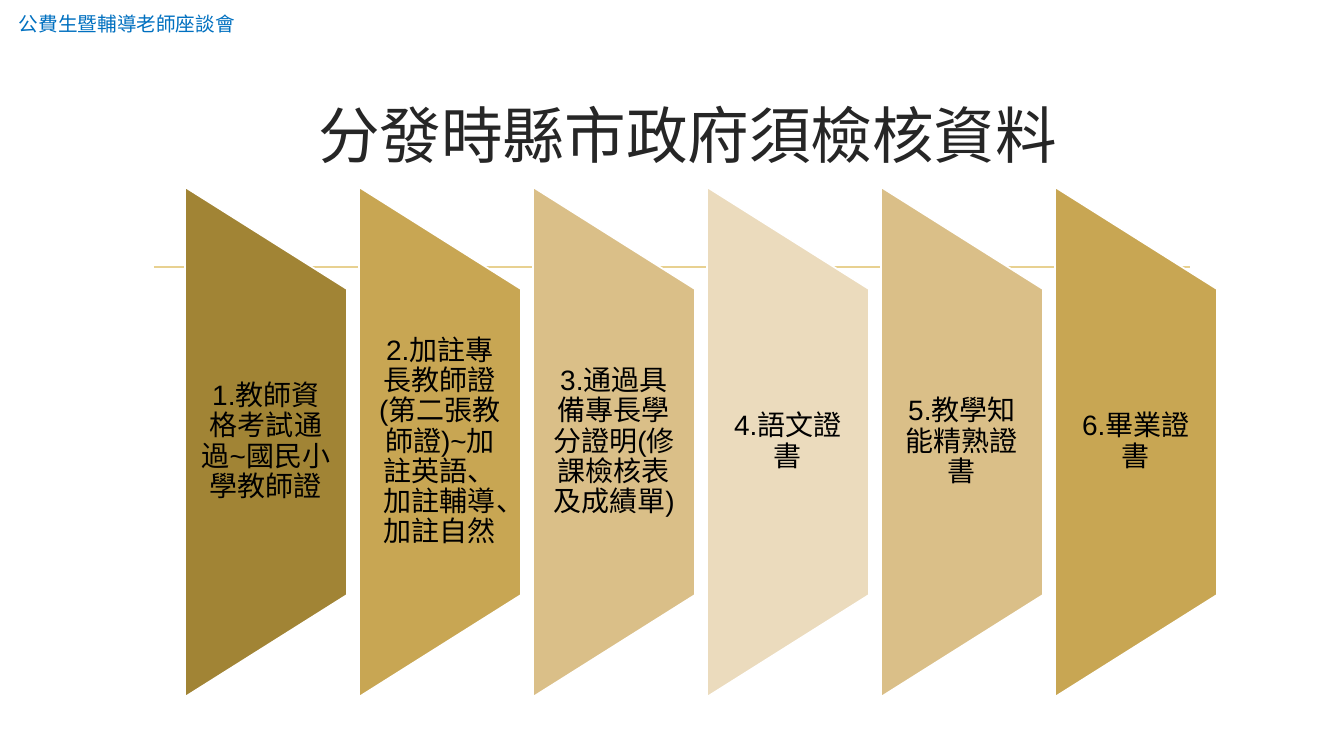
from lxml.etree import SubElement
from pptx import Presentation
from pptx.dml.color import RGBColor
from pptx.enum.shapes import MSO_CONNECTOR, MSO_SHAPE
from pptx.enum.text import MSO_ANCHOR, PP_ALIGN
from pptx.oxml.ns import qn
from pptx.util import Pt

HEADER = "公費生暨輔導老師座談會"
TITLE = "分發時縣市政府須檢核資料"
PANELS = [
    ("1.教師資格考試通過~國民小學教師證", "dark"),
    ("2.加註專長教師證(第二張教師證)~加註英語、加註輔導、加註自然", "gold"),
    ("3.通過具備專長學分證明(修課檢核表及成績單)", "sand"),
    ("4.語文證書", "cream"),
    ("5.教學知能精熟證書", "sand"),
    ("6.畢業證書", "gold"),
]
COLORS = {
    "dark": "A18435", "gold": "C8A653", "sand": "DABF88", "cream": "EBDBBD",
    "rule": "E8D191", "blue": "0070C0", "ink": "262626",
    "black": "000000", "white": "FFFFFF",
}
LATIN, HAN = "Arial", "Noto Sans CJK SC"

WIDTH, HEIGHT = 1344, 756
LEFT, TOP, PITCH = 185, 187, 174
WIDE, TALL = 162, 510
INSET = 14


def px(n):
    return round(n * 914400 / 100.8)


def box(*sides):
    return [px(n) for n in sides]


def color(name):
    return RGBColor.from_string(COLORS[name])


def write(shape, text, size, face, ink, align):
    frame = shape.text_frame
    frame.word_wrap = True
    frame.vertical_anchor = MSO_ANCHOR.MIDDLE
    para = frame.paragraphs[0]
    para.text = text
    para.alignment = align
    para.font.size = Pt(size)
    para.font.name = face
    para.font.color.rgb = color(ink)
    return frame


def panel(slide, left, text, fill):
    """Add a trapezoid turned on its side, with upright text over it."""
    x = left + (WIDE - TALL) / 2
    y = TOP + (TALL - WIDE) / 2
    shape = slide.shapes.add_shape(
        MSO_SHAPE.FLOWCHART_MANUAL_OPERATION, *box(x, y, TALL, WIDE))
    shape.rotation = 270
    shape.shadow.inherit = False
    shape.fill.solid()
    shape.fill.fore_color.rgb = color(fill)
    shape.line.color.rgb = color("white")
    shape.line.width = Pt(1.25)

    label = slide.shapes.add_textbox(
        *box(left, TOP + TALL / 5, WIDE, TALL * 3 / 5))
    frame = write(label, text, 20, LATIN, "black", PP_ALIGN.CENTER)
    frame.margin_left = frame.margin_right = px(INSET)
    frame.margin_top = frame.margin_bottom = 0
    frame.paragraphs[0].line_spacing = 0.9


def main():
    deck = Presentation()
    deck.slide_width, deck.slide_height = box(WIDTH, HEIGHT)
    slide = deck.slides.add_slide(deck.slide_layouts[5])

    rule = slide.shapes.add_connector(
        MSO_CONNECTOR.STRAIGHT, *box(154, 267, 1190, 267))
    rule.line.color.rgb = color("rule")
    rule.line.width = Pt(1.25)
    SubElement(rule.element.spPr, qn("a:effectLst"))

    header = slide.shapes.add_textbox(*box(9, 8, 575, 31))
    write(header, HEADER, 14, LATIN, "blue", PP_ALIGN.LEFT)

    title = slide.shapes.title
    title.left, title.top, title.width, title.height = box(159, 62, 1058, 144)
    write(title, TITLE, 44, HAN, "ink", PP_ALIGN.CENTER)

    for i, (text, fill) in enumerate(PANELS):
        panel(slide, LEFT + i * PITCH, text, fill)
    deck.save("out.pptx")


if __name__ == "__main__":
    main()
